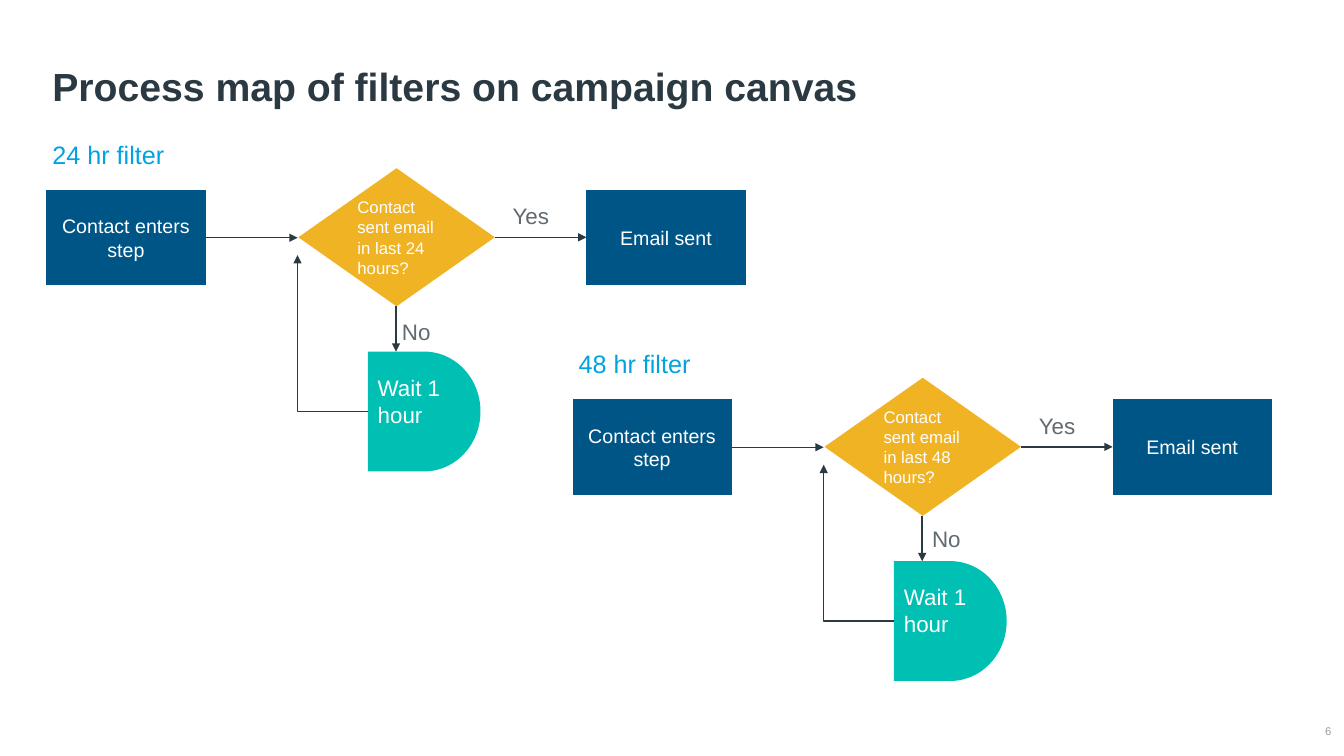
from dataclasses import dataclass

from lxml.etree import SubElement
from pptx import Presentation
from pptx.dml.color import RGBColor
from pptx.enum.shapes import MSO_CONNECTOR as Link, MSO_SHAPE as Shape
from pptx.enum.text import MSO_ANCHOR as Anchor, PP_ALIGN as Align
from pptx.oxml.ns import qn
from pptx.util import Cm, Pt


@dataclass(frozen=True)
class Theme:
    """Colours, font and type sizes of the slide."""
    font: str = "Arial"
    ink: str = "2B3A42"
    grey: str = "606B71"
    pale: str = "959CA0"
    white: str = "FFFFFF"
    sky: str = "00A3E0"
    navy: str = "005587"
    amber: str = "F0B323"
    teal: str = "00BFB3"
    title: int = 28
    heading: int = 18
    label: int = 16
    step: int = 14
    question: int = 12
    number: int = 8
    line: int = 1


@dataclass(frozen=True)
class Box:
    """A rectangle in centimetres."""
    x: float
    y: float
    w: float
    h: float

    def moved(self, dx: float, dy: float) -> "Box":
        """Return the rectangle shifted by an offset."""
        return Box(self.x + dx, self.y + dy, self.w, self.h)

    def lengths(self) -> tuple:
        """Return left, top, width and height as lengths."""
        return Cm(self.x), Cm(self.y), Cm(self.w), Cm(self.h)


@dataclass(frozen=True)
class Filter:
    """One filter flow: its hours, offset and place of the No label."""
    hours: int
    dx: float
    dy: float
    no_x: float
    no_y: float


@dataclass(frozen=True)
class Node:
    """A filled step of the flow."""
    text: str
    shape: Shape
    box: Box
    fill: str
    size: int
    align: Align = Align.LEFT
    anchor: Anchor = Anchor.MIDDLE


@dataclass(frozen=True)
class Arrow:
    """An arrow between two points in centimetres."""
    x1: float
    y1: float
    x2: float
    y2: float
    bent: bool = False


T = Theme()
FILTERS = [Filter(24, 0, 0, 9.88, 7.9), Filter(48, 13.26, 5.28, 9.98, 7.83)]
NODES = [
    Node("Contact enters step", Shape.FLOWCHART_PROCESS, Box(1.17, 4.78, 4.01, 2.41),
         T.navy, T.step, Align.CENTER),
    Node("Contact sent email in last {} hours?", Shape.FLOWCHART_DECISION,
         Box(7.52, 4.24, 4.95, 3.48), T.amber, T.question),
    Node("Wait 1 hour", Shape.FLOWCHART_DELAY, Box(9.27, 8.86, 2.84, 3.02),
         T.teal, T.label, anchor=Anchor.TOP),
    Node("Email sent", Shape.FLOWCHART_PROCESS, Box(14.78, 4.78, 4.01, 2.41),
         T.navy, T.step, Align.CENTER),
]
ARROWS = [
    Arrow(5.18, 5.99, 7.5, 5.99),
    Arrow(12.47, 5.98, 14.78, 5.98),
    Arrow(9.98, 7.72, 9.98, 8.86),
    Arrow(9.27, 10.37, 7.5, 6.43, bent=True),
]


def write(sp, text: str, *, size: int, color: str, bold: bool = False,
          align: Align = Align.LEFT, anchor: Anchor = Anchor.TOP, wrap: bool = True,
          spacing: float = 1.0, inset: bool = True) -> None:
    """Put formatted text into a shape."""
    tf = sp.text_frame
    tf.word_wrap, tf.vertical_anchor = wrap, anchor
    if not inset:
        tf.margin_left = tf.margin_top = tf.margin_right = tf.margin_bottom = 0
    p = tf.paragraphs[0]
    p.alignment, p.line_spacing = align, spacing
    r = p.add_run()
    r.text = text
    r.font.name, r.font.size, r.font.bold = T.font, Pt(size), bold
    r.font.color.rgb = RGBColor.from_string(color)


def add_text(s, text: str, box: Box, **style) -> None:
    """Add a text box."""
    write(s.shapes.add_textbox(*box.lengths()), text, **style)


def add_node(s, node: Node, f: Filter) -> None:
    """Add a filled step of a filter flow."""
    sp = s.shapes.add_shape(node.shape, *node.box.moved(f.dx, f.dy).lengths())
    sp.shadow.inherit = False
    sp.fill.solid()
    sp.fill.fore_color.rgb = RGBColor.from_string(node.fill)
    sp.line.fill.background()
    write(sp, node.text.format(f.hours), size=node.size, color=T.white,
          align=node.align, anchor=node.anchor)


def add_arrow(s, a: Arrow, f: Filter) -> None:
    """Add a straight or one-bend arrow."""
    c = s.shapes.add_connector(Link.ELBOW if a.bent else Link.STRAIGHT,
                               Cm(a.x1 + f.dx), Cm(a.y1 + f.dy),
                               Cm(a.x2 + f.dx), Cm(a.y2 + f.dy))
    c.line.width = Pt(T.line)
    c.line.color.rgb = RGBColor.from_string(T.ink)
    pr = c._element.spPr
    if a.bent:
        pr.find(qn("a:prstGeom")).set("prst", "bentConnector2")
    SubElement(pr.find(qn("a:ln")), qn("a:tailEnd"), type="triangle")
    SubElement(pr, qn("a:effectLst"))


def add_filter(s, f: Filter) -> None:
    """Add one complete filter flow."""
    for node in NODES:
        add_node(s, node, f)
    for arrow in ARROWS:
        add_arrow(s, arrow, f)
    add_text(s, f"{f.hours} hr filter", Box(1.07, 3.38, 3.35, 1.02).moved(f.dx, f.dy),
             size=T.heading, color=T.sky, wrap=False)
    for text, box in (("Yes", Box(12.67, 4.98, 1.45, 0.94)),
                      ("No", Box(f.no_x, f.no_y, 1.24, 0.94))):
        add_text(s, text, box.moved(f.dx, f.dy), size=T.label, color=T.grey, wrap=False)


def main() -> None:
    """Build and save the slide."""
    prs = Presentation()
    prs.slide_width, prs.slide_height = Cm(33.87), Cm(19.05)
    s = prs.slides.add_slide(prs.slide_layouts[6])
    add_text(s, "Process map of filters on campaign canvas", Box(1.07, 0.76, 31.5, 2.13),
             size=T.title, color=T.ink, bold=True, anchor=Anchor.BOTTOM, spacing=0.9)
    for f in FILTERS:
        add_filter(s, f)
    add_text(s, "6", Box(32.56, 18.19, 0.99, 0.48), size=T.number, color=T.pale,
             align=Align.RIGHT, anchor=Anchor.MIDDLE, inset=False)
    prs.save("out.pptx")


if __name__ == "__main__":
    main()
